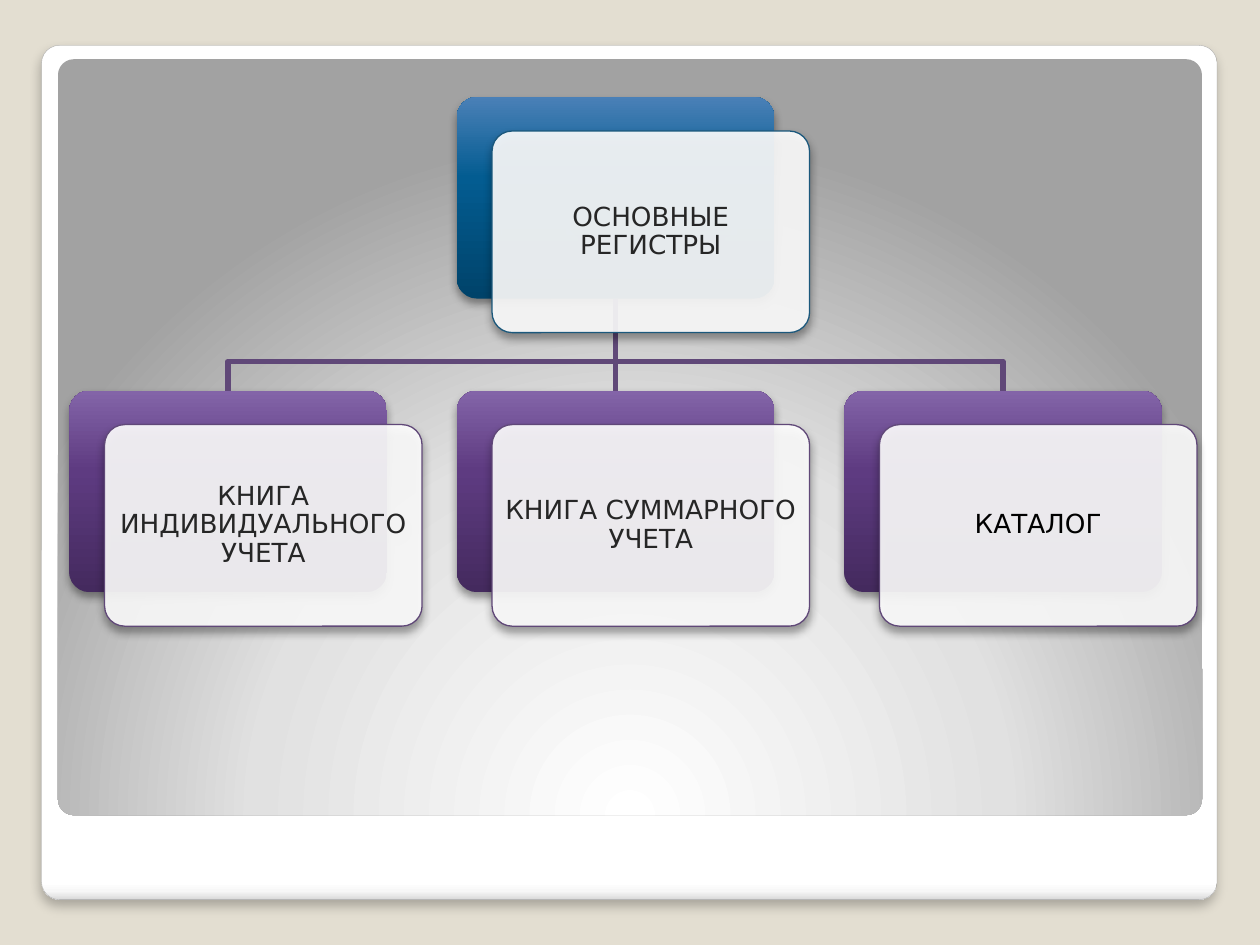
from dataclasses import dataclass
from pptx import Presentation, oxml, util as u
from pptx.dml import color
from pptx.enum import shapes, text
from pptx.oxml import ns
from pptx.shapes import autoshape as auto
from pptx.slide import Slide

RGB = color.RGBColor
SAND = RGB(0xE3, 0xDE, 0xD1)
WHITE = RGB(0xFF, 0xFF, 0xFF)
SNOW = RGB(0xF7, 0xF7, 0xF7)
MIST = RGB(0xDA, 0xDA, 0xDA)
PALE = RGB(0xE1, 0xE1, 0xE1)
GREY = RGB(0xA2, 0xA2, 0xA2)
EDGE = RGB(0xA4, 0xA4, 0xA4)
BLACK = RGB(0, 0, 0)
INK = RGB(0x26, 0x26, 0x26)
PLUM = RGB(0x60, 0x48, 0x78)
NAVY = RGB(0x1B, 0x58, 0x7C)
BLUES = ((0, RGB(0x00, 0x43, 0x6A)), (60, RGB(0x03, 0x5C, 0x91)), (100, RGB(0x4A, 0x80, 0xB7)))
PLUMS = ((0, RGB(0x44, 0x2A, 0x5E)), (60, RGB(0x5E, 0x3B, 0x81)), (100, RGB(0x83, 0x64, 0xA8)))
SHEET = ((0, WHITE), (98, WHITE), (99, SNOW), (100, MIST))
GLOW = ((0, WHITE), (55, PALE), (100, GREY))
Stops = tuple[tuple[int, RGB], ...]

WIDE, HIGH = 2.52, 1.6
LEFT, STEP = 0.55, 3.075
TOP, ROW = 0.77, 3.1
DX, DY = 0.28, 0.27
BEND = 2.87
ROUND = '<a:path path="circle"><a:fillToRect l="50000" t="175000" r="50000" b="-75000"/></a:path>'


@dataclass(frozen=True)
class Box:
    x: float
    y: float
    w: float = WIDE
    h: float = HIGH
    adj: float = 0.1


@dataclass(frozen=True)
class Shade:
    alpha: int
    blur: float
    dist: float


@dataclass(frozen=True)
class Node:
    label: str
    col: int
    y: float
    stops: Stops
    edge: RGB
    ink: RGB = INK


CAST = Shade(40, 5.2, 3)
ROOT = Node("ОСНОВНЫЕ РЕГИСТРЫ", 1, TOP, BLUES, NAVY)
KIDS = [
    Node("КНИГА ИНДИВИДУАЛЬНОГО УЧЕТА", 0, ROW, PLUMS, PLUM),
    Node("КНИГА СУММАРНОГО УЧЕТА", 1, ROW, PLUMS, PLUM),
    Node("КАТАЛОГ", 2, ROW, PLUMS, PLUM, BLACK),
]


def add_xml(shape: auto.Shape, tag: str, body: str) -> None:
    shape._element.spPr.append(oxml.parse_xml(f"<a:{tag} {ns.nsdecls('a')}>{body}</a:{tag}>"))


def blend(stops: Stops, way: str) -> str:
    marks = "".join(f'<a:gs pos="{pos * 1000}"><a:srgbClr val="{tone}"/></a:gs>' for pos, tone in stops)
    return f"<a:gsLst>{marks}</a:gsLst>{way}"


def slope(deg: int) -> str:
    return f'<a:lin ang="{deg * 60000}" scaled="0"/>'


def stroke(shape: auto.Shape, tone: RGB, width: float) -> None:
    shape.line.color.rgb = tone
    shape.line.width = u.Pt(width)


def cast(shape: auto.Shape, shade: Shade) -> None:
    add_xml(
        shape,
        "effectLst",
        f'<a:outerShdw blurRad="{u.Pt(shade.blur)}" dist="{u.Pt(shade.dist)}" dir="5400000" rotWithShape="0">'
        f'<a:srgbClr val="000000"><a:alpha val="{shade.alpha * 1000}"/></a:srgbClr></a:outerShdw>',
    )


def panel(slide: Slide, box: Box, tag: str, body: str, edge: RGB | None = None,
          width: float = 0.75, shade: Shade | None = None) -> auto.Shape:
    size = [u.Inches(n) for n in (box.x, box.y, box.w, box.h)]
    shape = slide.shapes.add_shape(shapes.MSO_SHAPE.ROUNDED_RECTANGLE, *size)
    shape.adjustments[0] = box.adj
    add_xml(shape, tag, body)
    if edge is None:
        shape.line.fill.background()
    else:
        stroke(shape, edge, width)
    if shade:
        cast(shape, shade)
    else:
        shape.shadow.inherit = False
    return shape


def place(node: Node) -> float:
    return LEFT + node.col * STEP


def back(slide: Slide, node: Node) -> auto.Shape:
    return panel(slide, Box(place(node), node.y), "gradFill", blend(node.stops, slope(270)), shade=CAST)


def front(slide: Slide, node: Node) -> None:
    fill = '<a:srgbClr val="FFFFFF"><a:alpha val="90000"/></a:srgbClr>'
    card = panel(slide, Box(place(node) + DX, node.y + DY), "solidFill", fill, node.edge, shade=CAST)
    frame = card.text_frame
    pad = u.Inches(0.02)
    look = {
        "word_wrap": True, "vertical_anchor": text.MSO_ANCHOR.MIDDLE,
        "margin_left": pad, "margin_right": pad, "margin_top": pad, "margin_bottom": pad,
    }
    for key, val in look.items():
        setattr(frame, key, val)
    para = frame.paragraphs[0]
    para.text = node.label
    para.alignment = text.PP_ALIGN.CENTER
    para.line_spacing = 0.9
    for key, val in {"size": u.Pt(15), "name": "DejaVu Sans"}.items():
        setattr(para.runs[0].font, key, val)
    para.runs[0].font.color.rgb = node.ink


def link(slide: Slide, kid: Node, head: auto.Shape, tail: auto.Shape) -> None:
    start, end = (place(n) + WIDE / 2 for n in (ROOT, kid))
    base = TOP + HIGH
    if kid.col == ROOT.col:
        spots = [u.Inches(n) for n in (start, base, end, ROW)]
        line = slide.shapes.add_connector(shapes.MSO_CONNECTOR.STRAIGHT, *spots)
        line.begin_connect(head, 2)
        line.end_connect(tail, 0)
        stroke(line, PLUM, 3.35)
        add_xml(line, "effectLst", "")
        return
    pen = slide.shapes.build_freeform(u.Inches(start), u.Inches(base))
    spots = [(start, BEND), (end, BEND), (end, ROW)]
    pen.add_line_segments([(u.Inches(x), u.Inches(y)) for x, y in spots], close=False)
    line = pen.convert_to_shape()
    line.fill.background()
    stroke(line, PLUM, 3.35)
    line.shadow.inherit = False


def main() -> None:
    deck = Presentation()
    deck.slide_width, deck.slide_height = u.Inches(10), u.Inches(7.5)
    slide = deck.slides.add_slide(deck.slide_layouts[6])
    slide.background.fill.solid()
    slide.background.fill.fore_color.rgb = SAND
    panel(slide, Box(0.33, 0.36, 9.33, 6.78, 0.021), "gradFill", blend(SHEET, slope(90)),
          EDGE, 0.16, Shade(25, 6, 4))
    panel(slide, Box(0.46, 0.47, 9.08, 6, 0.021), "gradFill", blend(GLOW, ROUND))
    head = back(slide, ROOT)
    for kid in KIDS:
        link(slide, kid, head, back(slide, kid))
    for node in [ROOT, *KIDS]:
        front(slide, node)
    deck.save("out.pptx")


if __name__ == "__main__":
    main()
